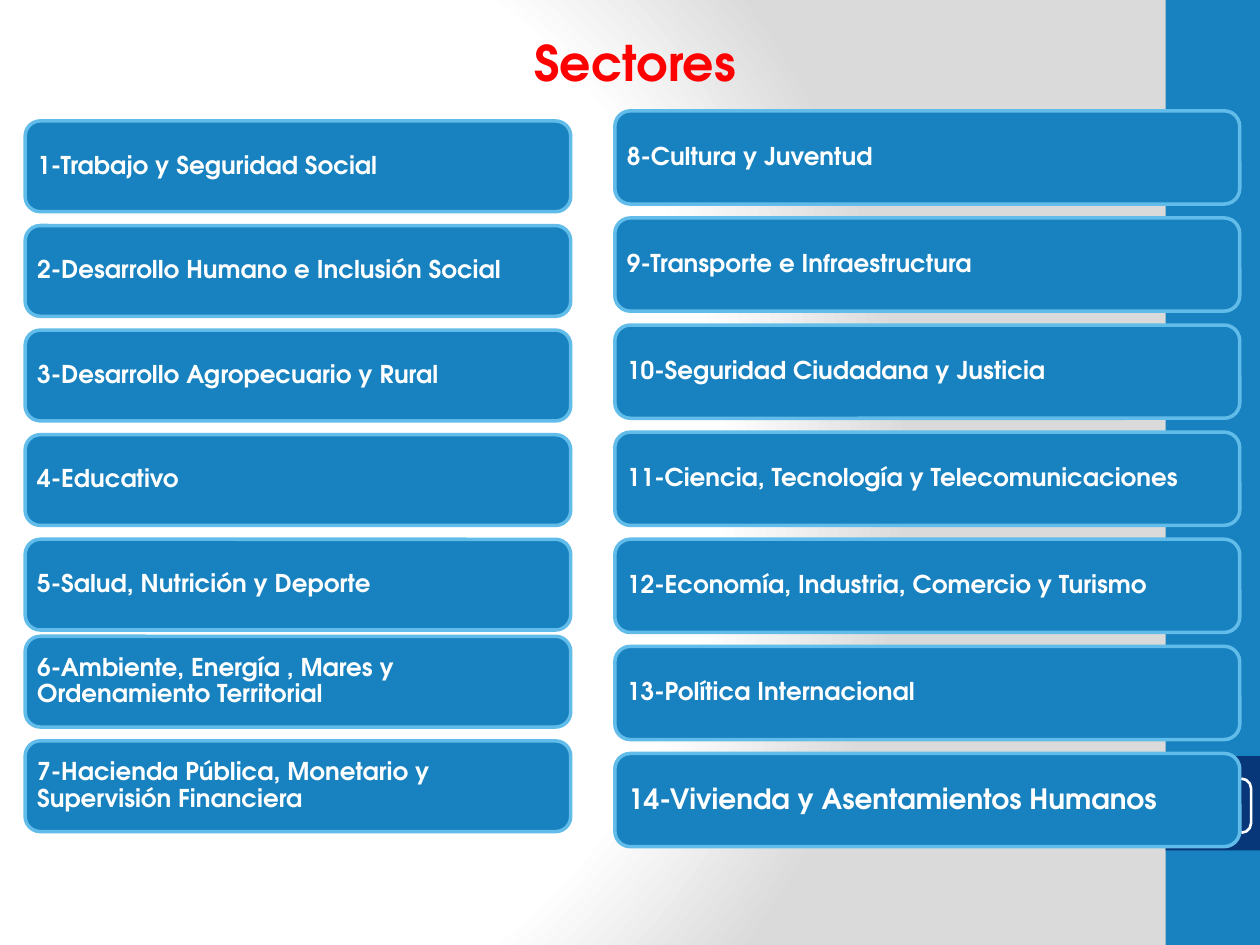
from pptx import Presentation
from pptx.dml.color import RGBColor
from pptx.enum.shapes import MSO_SHAPE as Shape
from pptx.enum.text import MSO_ANCHOR as Anchor, PP_ALIGN as Align
from pptx.oxml import parse_xml
from pptx.oxml.ns import nsdecls
from pptx.util import Inches, Pt

FONT = "TeX Gyre Adventor"
BLUE = RGBColor(0x17, 0x82, 0xBF)
NAVY = RGBColor(0x07, 0x37, 0x79)
SKY = RGBColor(0x62, 0xBC, 0xE9)
WHITE = RGBColor(0xFF, 0xFF, 0xFF)
RED = RGBColor(0xFF, 0x00, 0x00)

TITLE = "Sectores"
STACKS = [
    {"left": 0.2, "top": 0.96, "width": 4.33, "height": 0.72, "step": 0.83, "sectors": [
        "1-Trabajo y Seguridad Social",
        "2-Desarrollo Humano e Inclusión Social",
        "3-Desarrollo Agropecuario y Rural",
        "4-Educativo",
        "5-Salud, Nutrición y Deporte",
    ]},
    {"left": 0.2, "top": 5.05, "width": 4.33, "height": 0.72, "step": 0.83, "sectors": [
        "6-Ambiente, Energía , Mares y Ordenamiento Territorial",
        "7-Hacienda Pública, Monetario y Supervisión Financiera",
    ]},
    {"left": 4.88, "top": 0.88, "width": 4.96, "height": 0.74, "step": 0.85, "sectors": [
        "8-Cultura y Juventud",
        "9-Transporte e Infraestructura",
        "10-Seguridad Ciudadana y Justicia",
        "11-Ciencia, Tecnología y Telecomunicaciones",
        "12-Economía, Industria, Comercio y Turismo",
        "13-Política Internacional",
        "14-Vivienda y Asentamientos Humanos",
    ]},
]
LARGER_SECTORS = {"14-Vivienda y Asentamientos Humanos"}

BACKGROUND = f"""<p:bg {nsdecls('p', 'a')}><p:bgPr>
<a:gradFill rotWithShape="1"><a:gsLst>
<a:gs pos="0"><a:srgbClr val="FFFFFF"/></a:gs>
<a:gs pos="75000"><a:srgbClr val="FFFFFF"/></a:gs>
<a:gs pos="100000"><a:srgbClr val="DADADA"/></a:gs>
</a:gsLst><a:path path="circle">
<a:fillToRect l="20000" t="50000" r="100000" b="50000"/>
</a:path></a:gradFill><a:effectLst/></p:bgPr></p:bg>"""


def add_shape(page, kind, left, top, width, height, fill=None, line=None, weight=1.5):
    shape = page.shapes.add_shape(
        kind, Inches(left), Inches(top), Inches(width), Inches(height))
    shape.shadow.inherit = False
    if fill is None:
        shape.fill.background()
    else:
        shape.fill.solid()
        shape.fill.fore_color.rgb = fill
    if line is None:
        shape.line.fill.background()
    else:
        shape.line.color.rgb = line
        shape.line.width = Pt(weight)
    return shape


def write(box, text, size, color, align, anchor):
    frame = box.text_frame
    frame.text = text
    frame.word_wrap = True
    frame.vertical_anchor = anchor
    paragraph = frame.paragraphs[0]
    paragraph.alignment = align
    font = paragraph.runs[0].font
    font.name, font.size, font.bold = FONT, Pt(size), True
    font.color.rgb = color
    return frame


def add_sector(page, text, left, top, width, height):
    box = add_shape(page, Shape.ROUNDED_RECTANGLE, left, top, width, height, BLUE, SKY, 2)
    larger = text in LARGER_SECTORS
    frame = write(box, text, 16 if larger else 14, WHITE, Align.LEFT, Anchor.MIDDLE)
    frame.paragraphs[0].line_spacing = 0.9
    inset = Inches(0.07 if larger else 0.06)
    frame.margin_left = frame.margin_right = inset
    frame.margin_top = frame.margin_bottom = inset


def main():
    deck = Presentation()
    deck.slide_width, deck.slide_height = Inches(10), Inches(7.5)
    page = deck.slides.add_slide(deck.slide_layouts[5])
    page.element.cSld.insert(0, parse_xml(BACKGROUND))

    add_shape(page, Shape.RECTANGLE, 9.25, 0, 0.75, 7.5, BLUE)
    add_shape(page, Shape.RECTANGLE, 9.25, 6, 0.75, 0.75, NAVY)
    bracket = add_shape(page, Shape.DOUBLE_BRACKET, 9.33, 6.18, 0.6, 0.43, line=WHITE)
    bracket.adjustments[0] = 0.18

    title = page.shapes.title
    title.left, title.top = Inches(1.85), Inches(0.21)
    title.width, title.height = Inches(6.38), Inches(0.57)
    write(title, TITLE, 28, RED, Align.CENTER, Anchor.TOP)

    for stack in STACKS:
        for row, sector in enumerate(stack["sectors"]):
            top = stack["top"] + row * stack["step"]
            add_sector(page, sector, stack["left"], top, stack["width"], stack["height"])

    deck.save("out.pptx")


if __name__ == "__main__":
    main()
